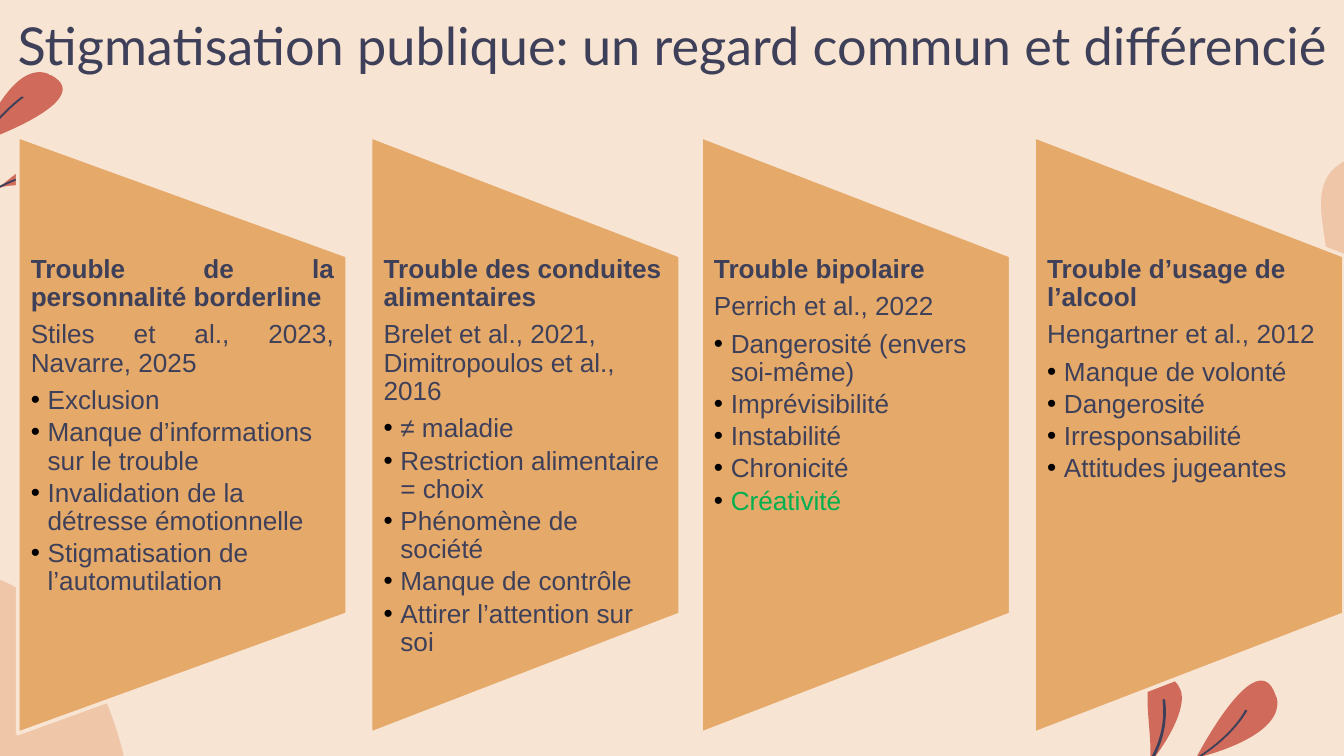
from lxml.etree import SubElement
from pptx import Presentation
from pptx.dml.color import RGBColor
from pptx.enum.shapes import MSO_SHAPE
from pptx.enum.text import MSO_ANCHOR, MSO_AUTO_SIZE, PP_ALIGN
from pptx.oxml.ns import qn
from pptx.util import Pt

CREAM, PEACH, CORAL, OCHRE = "F8E4D2", "F0C6A8", "D06B5C", "E5A96A"
INK, GREEN, BLACK = "3E4059", "00B050", "000000"

# Curves: a start point, then two control points and an end point per segment
LEFT_BLOB = [
    (202, 162), (203, 158), (205, 154), (206, 151), (216, 120), (205, 80), (190, 51),
    (175, 26), (138, -23), (107, 10), (87, 34), (69, 18), (44, 22),
    (29, 26), (18, 36), (11, 49), (2, 66), (0, 88), (5, 106),
    (12, 132), (31, 153), (54, 165), (80, 177), (107, 189), (135, 192),
    (161, 195), (190, 185), (202, 162)]
RIGHT_BLOB = [
    (12, 211), (40, 248), (106, 243), (143, 207), (182, 172), (189, 110), (163, 67),
    (161, 64), (160, 62), (158, 60), (134, 28), (85, -14), (47, 6),
    (25, 17), (37, 42), (37, 62), (33, 99), (-2, 124), (0, 167),
    (-1, 186), (4, 200), (12, 211)]
LEFT_LEAVES = [
    [(37, -0.4), (16.8, -8.3), (0.2, 36.3), (0.2, 36.3), (0.2, 36.3), (64.3, 14),
     (38.4, 0.3), (37.6, 0.3), (37, 0.3), (37, -0.4)],
    [(49.2, 42.8), (35.5, 37), (10.3, 60.8), (10.3, 60.8), (22.5, 55.8), (61.4, 65.1),
     (56.4, 50.7), (54.9, 46.4), (52.8, 43.5), (49.2, 42.8)]]
LEFT_VEIN = [
    (23.2, 11.8), (23.2, 11.8), (23.2, 11.8), (22.5, 11.8),
    (10.3, 21.2), (-0.5, 34.9), (-9.9, 51.4), (-17.8, 66.6), (-24.3, 83.1), (-29.3, 99),
    (-29.3, 99.7), (-28.6, 99.7), (-28.6, 99), (-14.2, 72.3), (13.2, 54.3), (43.4, 50.7),
    (44.1, 50.7), (44.1, 50), (43.4, 50), (14.6, 52.9), (-11.3, 69.4), (-26.4, 93.9),
    (-22.1, 79.5), (-16.4, 65.1), (-9.2, 52.2), (0.2, 35.6), (11, 21.9), (23.2, 12.6),
    (24, 12.6), (24, 11.8), (23.2, 11.8)]
RIGHT_LEAVES = [
    [(84, 13.7), (84, 13.7), (83.3, 13), (83.3, 12.2), (73.2, -16.6), (40.8, 46.1),
     (40.8, 46.1), (40.8, 46.1), (89, 35.3), (84, 13.7)],
    [(32.9, 10.8), (31.4, 6.5), (28.6, 2.9), (22.8, 1.4), (7.7, -2.9), (19.2, 36.7),
     (15.6, 49.7), (15.6, 49.7), (35.8, 25.2), (32.9, 10.8)]]
RIGHT_VEIN = [
    (68.2, 20.9), (68.2, 20.9), (67.4, 20.2), (67.4, 20.2),
    (67.4, 20.2), (66.7, 20.2), (66.7, 20.9), (66.7, 20.9), (53.8, 47.5), (5.5, 61.2),
    (19.2, 50.4), (26.4, 32.4), (24.2, 15.1), (24.2, 15.1), (23.5, 14.4), (23.5, 14.4),
    (23.5, 14.4), (22.8, 15.1), (22.8, 15.1), (25, 33.1), (17, 51.1), (2.6, 61.9),
    (2.6, 61.9), (1.9, 62.6), (1.9, 62.6), (2.6, 62.6), (2.6, 62.6), (2.6, 62.6),
    (53.8, 49.7), (67.4, 21.6), (68.2, 20.9)]

COLUMNS = [
    (9.5, 176.5, PP_ALIGN.JUSTIFY, "Trouble de la personnalité borderline",
     "Stiles et al., 2023, Navarre, 2025",
     ["Exclusion", "Manque d’informations sur le trouble",
      "Invalidation de la détresse émotionnelle",
      "Stigmatisation de l’automutilation"]),
    (198.5, 166, PP_ALIGN.LEFT, "Trouble des conduites alimentaires",
     "Brelet et al., 2021, Dimitropoulos et al., 2016",
     ["≠ maladie", "Restriction alimentaire = choix", "Phénomène de société",
      "Manque de contrôle", "Attirer l’attention sur soi"]),
    (375.5, 166, PP_ALIGN.LEFT, "Trouble bipolaire", "Perrich et al., 2022",
     ["Dangerosité (envers soi-même)", "Imprévisibilité", "Instabilité",
      "Chronicité", "Créativité"]),
    (554, 166, PP_ALIGN.LEFT, "Trouble d’usage de l’alcool",
     "Hengartner et al., 2012",
     ["Manque de volonté", "Dangerosité", "Irresponsabilité",
      "Attitudes jugeantes"]),
]


def paint(target, color):
    """Give a fill or background fill a solid colour."""
    target.solid()
    target.fore_color.rgb = RGBColor.from_string(color)


def place(shape, left, top, width, height):
    shape.left, shape.top = Pt(left), Pt(top)
    shape.width, shape.height = Pt(width), Pt(height)


def write(frame, text, size=14, font="Arial", color=INK, bold=False,
          align=PP_ALIGN.LEFT, after=0, line=None, bullet=False):
    """Add one paragraph, filling the first one if it is still empty."""
    first = frame.paragraphs[0]
    para = frame.add_paragraph() if first.runs else first
    para.alignment = align
    para.space_before, para.space_after = Pt(0), Pt(after)
    if line:
        para.line_spacing = line
    if bullet:
        para.level = 1
        props = para._p.get_or_add_pPr()
        props.set("marL", str(Pt(9)))
        props.set("indent", str(-Pt(9)))
        tint = SubElement(props, qn("a:buClr"))
        SubElement(tint, qn("a:srgbClr"), val=BLACK)
        SubElement(props, qn("a:buFont"), typeface=font)
        SubElement(props, qn("a:buChar"), char="•")
    run = para.add_run()
    run.text = text
    run.font.size, run.font.name, run.font.bold = Pt(size), font, bold
    run.font.color.rgb = RGBColor.from_string(color)


def curve(slide, left, top, nodes, fill):
    """Draw a closed outline, joining each three nodes into one Bézier."""
    points = [(Pt(x), Pt(y)) for x, y in nodes]
    pen = slide.shapes.build_freeform(*points[0])
    pen.add_line_segments(points[1:], close=True)
    shape = pen.convert_to_shape(Pt(left), Pt(top))
    lines = list(shape._element.iter(qn("a:lnTo")))
    for i in range(0, len(nodes) - 1, 3):
        bend = lines[i].makeelement(qn("a:cubicBezTo"))
        lines[i].addprevious(bend)
        for part in lines[i:i + 3]:
            bend.append(part[0])
    for part in lines:
        part.getparent().remove(part)
    shape.shadow.inherit = False
    paint(shape.fill, fill)
    shape.line.fill.background()


def sprig(slide, left, top, leaves, vein):
    for leaf in leaves:
        curve(slide, left, top, leaf, CORAL)
    curve(slide, left, top, vein, INK)


def head(slide, left, top, width, height):
    title = slide.shapes.title
    place(title, left, top, width, height)
    frame = title.text_frame
    frame.auto_size = MSO_AUTO_SIZE.NONE
    frame.word_wrap = True
    frame.vertical_anchor = MSO_ANCHOR.TOP
    frame.margin_left = frame.margin_right = Pt(7.2)
    frame.margin_top = frame.margin_bottom = Pt(7.2)
    write(frame, "Stigmatisation publique: un regard commun et différencié",
          size=28, font="Lato", align=PP_ALIGN.CENTER)


def column(slide, left, top, width, height, align, name, source, traits):
    """Draw a panel turned on its side, with its text in the middle."""
    panel = slide.shapes.add_shape(
        MSO_SHAPE.FLOWCHART_MANUAL_OPERATION,
        Pt(left + (width - height) / 2), Pt(top + (height - width) / 2),
        Pt(height), Pt(width))
    panel.rotation = 270
    panel.shadow.inherit = False
    paint(panel.fill, OCHRE)
    paint(panel.line.fill, CREAM)
    panel.line.width = Pt(2)

    box = slide.shapes.add_textbox(
        Pt(left), Pt(top + height * 0.2), Pt(width), Pt(height * 0.6))
    frame = box.text_frame
    frame.word_wrap = True
    frame.margin_left = frame.margin_right = Pt(7)
    frame.margin_top = frame.margin_bottom = Pt(0)
    write(frame, name, bold=True, align=align, after=4.9, line=0.9)
    write(frame, source, align=align, after=4.9, line=0.9)
    for trait in traits:
        color = GREEN if trait == "Créativité" else INK
        write(frame, trait, color=color, after=2.1, line=0.9, bullet=True)


def main():
    deck = Presentation()
    deck.slide_width, deck.slide_height = Pt(720), Pt(405)
    slide = deck.slides.add_slide(deck.slide_layouts[5])
    paint(slide.background.fill, CREAM)
    curve(slide, -140, 310, LEFT_BLOB, PEACH)
    curve(slide, 674, 80, RIGHT_BLOB, PEACH)
    sprig(slide, -11, 40, LEFT_LEAVES, LEFT_VEIN)
    sprig(slide, 600, 360, RIGHT_LEAVES, RIGHT_VEIN)
    head(slide, -4, 0, 728, 52)
    for left, width, *content in COLUMNS:
        column(slide, left, 73, width, 320, *content)
    deck.save("out.pptx")


if __name__ == "__main__":
    main()
